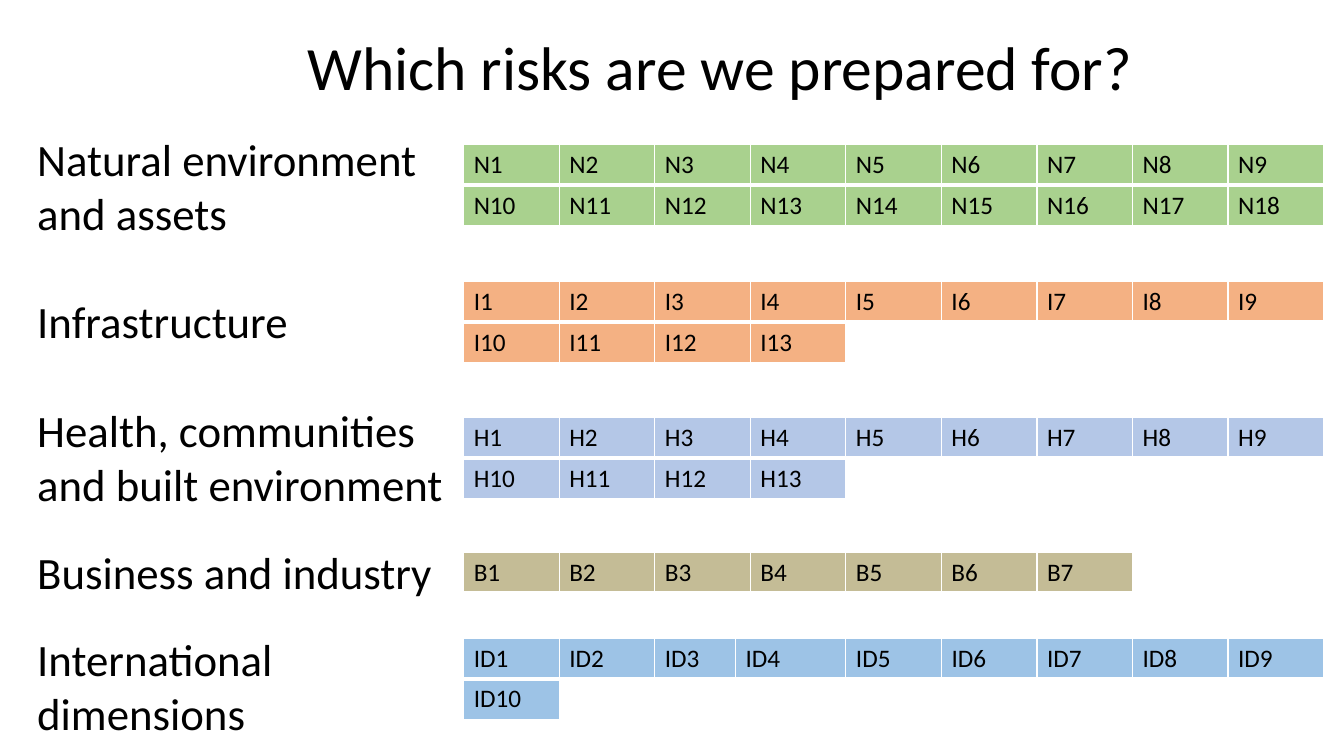
from dataclasses import dataclass

from lxml import etree
from pptx import Presentation
from pptx.dml.color import RGBColor
from pptx.enum.text import MSO_AUTO_SIZE
from pptx.oxml.ns import qn
from pptx.util import Inches, Pt

GROW = MSO_AUTO_SIZE.SHAPE_TO_FIT_TEXT
WIDE, HIGH = Inches(13.33), Inches(7.5)
COLS, ROWS = 9, 2
HEX = {"text": "000000", "blank": "FFFFFF", "green": "A9D18E", "orange": "F4B183",
       "blue": "B4C7E7", "tan": "C4BC96", "sky": "9DC3E6"}


@dataclass
class Risk:
    code: str
    count: int
    top: float  # percent of slide height
    tint: str
    lines: tuple[str, ...]
    gap: float  # points above the label
    shift: float = 0  # percent of slide width moved from column 3 to 4


RISKS = [
    Risk("N", 18, 19.07, "green", ("Natural environment", "and assets"), 0),
    Risk("I", 13, 37.2, "orange", ("Infrastructure",), 39),
    Risk("H", 13, 55.2, "blue", ("Health, communities", "and built environment"), 39),
    Risk("B", 7, 73.07, "tan", ("Business and industry",), 24.4),
    Risk("ID", 10, 84.4, "sky", ("International", "dimensions"), 24.4, 1.1),
]


def across(share: float) -> int:
    return round(WIDE * share / 100)


def down(share: float) -> int:
    return round(HIGH * share / 100)


def style(para, size: float) -> None:
    for name, value in {"name": "Calibri", "size": Pt(size)}.items():
        setattr(para.font, name, value)
    para.font.color.rgb = RGBColor.from_string(HEX["text"])


def write(slide, left: float, top: float, width: float, height: float,
          lines: list[tuple[str, float]], size: float) -> None:
    box = slide.shapes.add_textbox(across(left), down(top), across(width), down(height))
    frame = box.text_frame
    for name, value in {"word_wrap": True, "auto_size": GROW}.items():
        setattr(frame, name, value)
    for i, (text, gap) in enumerate(lines):
        para = frame.add_paragraph() if i else frame.paragraphs[0]
        para.text = text
        if gap:
            para.space_before = Pt(gap)
        style(para, size)


def edge(cell, sides: dict[str, float]) -> None:
    props = cell._tc.get_or_add_tcPr()
    for side, width in sides.items():
        line = etree.SubElement(props, qn(f"a:ln{side}"), w=str(Pt(width)))
        fill = etree.SubElement(line, qn("a:solidFill"))
        etree.SubElement(fill, qn("a:srgbClr"), val=HEX["blank"])


def grid(slide, risk: Risk) -> None:
    frame = slide.shapes.add_table(ROWS, COLS, across(34.5), down(risk.top),
                                   across(64), down(10.8))
    table = frame.table
    table.first_row = table.horz_banding = False
    table.columns[2].width -= across(risk.shift)
    table.columns[3].width += across(risk.shift)
    for i, cell in enumerate(table.iter_cells()):
        first = i < COLS
        edge(cell, {"L": 1, "R": 1, "T": 1 if first else 3, "B": 3 if first else 1})
        used = i < risk.count
        cell.fill.solid()
        cell.fill.fore_color.rgb = RGBColor.from_string(HEX[risk.tint if used else "blank"])
        if used:
            cell.text = f"{risk.code}{i + 1}"
        style(cell.text_frame.paragraphs[0], 18)


def main() -> None:
    deck = Presentation()
    deck.slide_width, deck.slide_height = WIDE, HIGH
    slide = deck.slides.add_slide(deck.slide_layouts[6])

    # Group labels
    labels = [(text, 0 if i else risk.gap)
              for risk in RISKS for i, text in enumerate(risk.lines)]
    write(slide, 2.03, 16.8, 47.11, 83.07, labels, 32)

    # Risk codes
    for risk in RISKS:
        grid(slide, risk)

    # Title
    write(slide, 22.13, 3.2, 77.87, 11.2, [("Which risks are we prepared for?", 0)], 44)

    deck.save("out.pptx")


if __name__ == "__main__":
    main()
